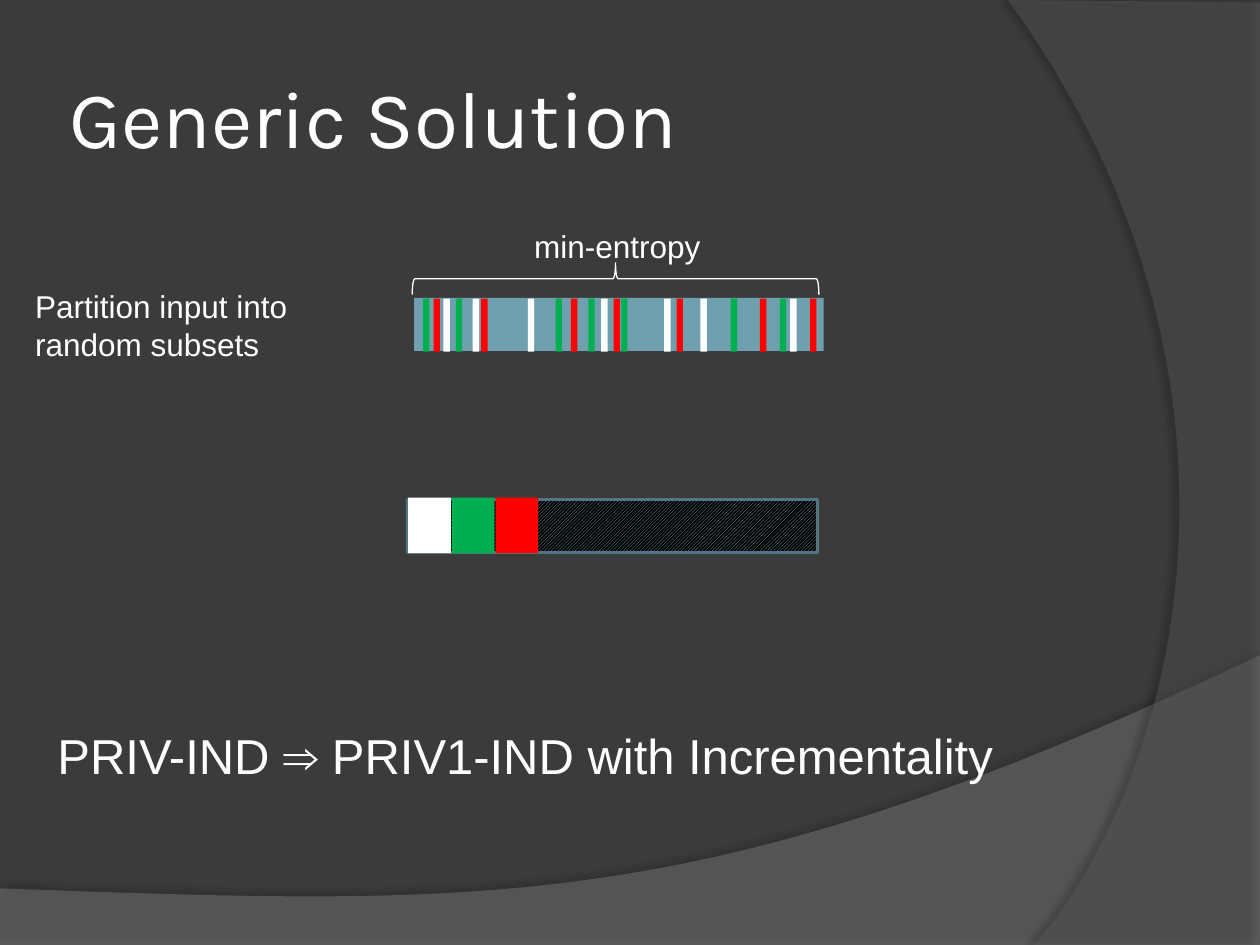
from lxml import etree
from pptx import Presentation
from pptx.dml.color import RGBColor
from pptx.enum.dml import MSO_PATTERN
from pptx.enum.shapes import MSO_SHAPE
from pptx.enum.text import MSO_ANCHOR, MSO_AUTO_SIZE, PP_ALIGN
from pptx.oxml.ns import qn
from pptx.util import Cm, Pt

RECTANGLE, BRACE = MSO_SHAPE.RECTANGLE, MSO_SHAPE.RIGHT_BRACE
HATCH = MSO_PATTERN.LIGHT_UPWARD_DIAGONAL
MIDDLE, LEFT = MSO_ANCHOR.MIDDLE, PP_ALIGN.LEFT
FIT_TEXT = MSO_AUTO_SIZE.SHAPE_TO_FIT_TEXT

WIDTH, HEIGHT = 25.4, 19.05
TITLE_ONLY = 5
WHITE, GREEN, RED = "FFFFFF", "00B050", "FF0000"
STEEL, STEEL_DARK, BLACK = "6EA0B0", "517682", "000000"

STRIPE_TOP, STRIPE_WIDTH, STRIPE_HEIGHT = 6.02, 0.13, 1.07
STRIPES = {
    WHITE: (8.94, 9.53, 10.64, 12.12, 13.39, 14.12, 15.93),
    GREEN: (8.53, 9.19, 11.2, 11.86, 12.52, 14.73, 15.72),
    RED: (8.74, 16.33, 9.7, 11.51, 12.37, 13.64, 15.32),
}
SUBSET_LEFT, SUBSET_TOP, SUBSET_STEP = 8.23, 10.03, 0.88
SUBSET_WIDTH, SUBSET_HEIGHT = 0.86, 1.12


def color(hex_code):
    return RGBColor.from_string(hex_code)


def box(left, top, width, height):
    return Cm(left), Cm(top), Cm(width), Cm(height)


def set_solid(fill, hex_code):
    fill.solid()
    fill.fore_color.rgb = color(hex_code)


def set_alpha(color_element, percent):
    alpha = etree.SubElement(color_element, qn("a:alpha"))
    alpha.set("val", str(percent * 1000))


def curve(start, control_1, control_2, end, steps=60):
    """Return points along a cubic Bézier curve, without its start."""
    points = []
    for step in range(1, steps + 1):
        t = step / steps
        weights = ((1 - t) ** 3, 3 * t * (1 - t) ** 2, 3 * t ** 2 * (1 - t), t ** 3)
        corners = (start, control_1, control_2, end)
        points.append(tuple(sum(w * c[axis] for w, c in zip(weights, corners))
                            for axis in (0, 1)))
    return points


def add_swoosh(slide, points, fill, opacity, shadow_opacity, distance, direction):
    outline = [(Cm(x), Cm(y)) for x, y in points]
    builder = slide.shapes.build_freeform(*outline[0])
    builder.add_line_segments(outline[1:], close=True)
    swoosh = builder.convert_to_shape()
    set_solid(swoosh.fill, fill)
    swoosh.line.fill.background()
    swoosh.shadow.inherit = False
    properties = swoosh.element.spPr
    set_alpha(properties.find(".//" + qn("a:srgbClr")), opacity)

    shadow = etree.SubElement(properties.find(qn("a:effectLst")), qn("a:outerShdw"))
    values = {"blurRad": Pt(4), "dist": Pt(distance), "dir": direction * 60000,
              "algn": "ctr", "rotWithShape": 0}
    for name, value in values.items():
        shadow.set(name, str(value))
    shadow_color = etree.SubElement(shadow, qn("a:srgbClr"), val=BLACK)
    set_alpha(shadow_color, shadow_opacity)


def add_block(shapes, place, fill=None, line=None, line_width=1, rotation=0,
              kind=RECTANGLE):
    block = shapes.add_shape(kind, *box(*place))
    block.shadow.inherit = False
    block.rotation = rotation
    if fill:
        set_solid(block.fill, fill)
    else:
        block.fill.background()
    if line:
        set_solid(block.line.fill, line)
        block.line.width = Pt(line_width)
    else:
        block.line.fill.background()
    return block


def write(frame, text, size, font_name="Arial", **frame_format):
    for name, value in frame_format.items():
        setattr(frame, name, value)
    paragraph = frame.paragraphs[0]
    paragraph.alignment = LEFT
    run = paragraph.add_run()
    run.text = text
    for name, value in {"name": font_name, "size": Pt(size)}.items():
        setattr(run.font, name, value)
    run.font.color.rgb = color(WHITE)


def add_label(slide, place, text, size, wrap=False):
    label = slide.shapes.add_textbox(*box(*place))
    write(label.text_frame, text, size, word_wrap=wrap, auto_size=FIT_TEXT)


def add_title(slide, text):
    title = slide.shapes.title
    title.left, title.top, title.width, title.height = box(1.27, 0.76, 20.75, 3.18)
    margins = {f"margin_{side}": Cm(0.13) for side in ("left", "top", "right", "bottom")}
    write(title.text_frame, text, 46, "Karla", vertical_anchor=MIDDLE, **margins)


def add_background(slide):
    set_solid(slide.background.fill, "3B3B3B")
    right_top = (WIDTH, 13.21)
    wave = [(0, 17.91), (0, HEIGHT), (WIDTH, HEIGHT), right_top]
    wave += curve(right_top, (14.2, 18.52), (9.93, 18.26), (0, 17.91))
    add_swoosh(slide, wave, "7F7F7F", 45, 35, 3.5, 270)

    arc_foot = (20.85, HEIGHT)
    arc = [(WIDTH, 0.05), (WIDTH, HEIGHT), arc_foot]
    arc += curve(arc_foot, (23.75, 15.72), (25.86, 7.62), (20.32, 0))
    add_swoosh(slide, arc, "5E5E5E", 40, 45, 4, 180)


def add_stripes(slide, hex_code):
    group = slide.shapes.add_group_shape()
    for left in STRIPES[hex_code]:
        add_block(group.shapes, (left, STRIPE_TOP, STRIPE_WIDTH, STRIPE_HEIGHT), hex_code)


def main():
    presentation = Presentation()
    presentation.slide_width, presentation.slide_height = Cm(WIDTH), Cm(HEIGHT)
    slide = presentation.slides.add_slide(presentation.slide_layouts[TITLE_ONLY])
    add_background(slide)
    add_title(slide, "Generic Solution")

    add_block(slide.shapes, (11.94, 2.41, 1.07, 8.26), STEEL, rotation=90)
    hidden_input = add_block(slide.shapes, (11.81, 6.48, 1.07, 8.26),
                             line=STEEL_DARK, line_width=1.5, rotation=90)
    hidden_input.fill.patterned()
    hidden_input.fill.pattern = HATCH
    hidden_input.fill.fore_color.rgb = color(STEEL)
    hidden_input.fill.back_color.rgb = color(BLACK)

    for index, hex_code in enumerate(STRIPES):
        add_stripes(slide, hex_code)
        subset_left = SUBSET_LEFT + index * SUBSET_STEP
        add_block(slide.shapes, (subset_left, SUBSET_TOP, SUBSET_WIDTH, SUBSET_HEIGHT),
                  hex_code)

    add_block(slide.shapes, (12.09, 1.52, 0.64, 8.2), line=WHITE, line_width=0.75,
              rotation=270, kind=BRACE)
    add_label(slide, (10.52, 4.45, 3.89, 1.02), "min-entropy", 18)
    add_label(slide, (0.46, 5.66, 7.87, 1.8), "Partition input into random subsets", 18,
              wrap=True)
    add_label(slide, (0.91, 14.5, 19.86, 1.45),
              "PRIV-IND ⇒ PRIV1-IND with Incrementality", 28)
    presentation.save("out.pptx")


if __name__ == "__main__":
    main()
